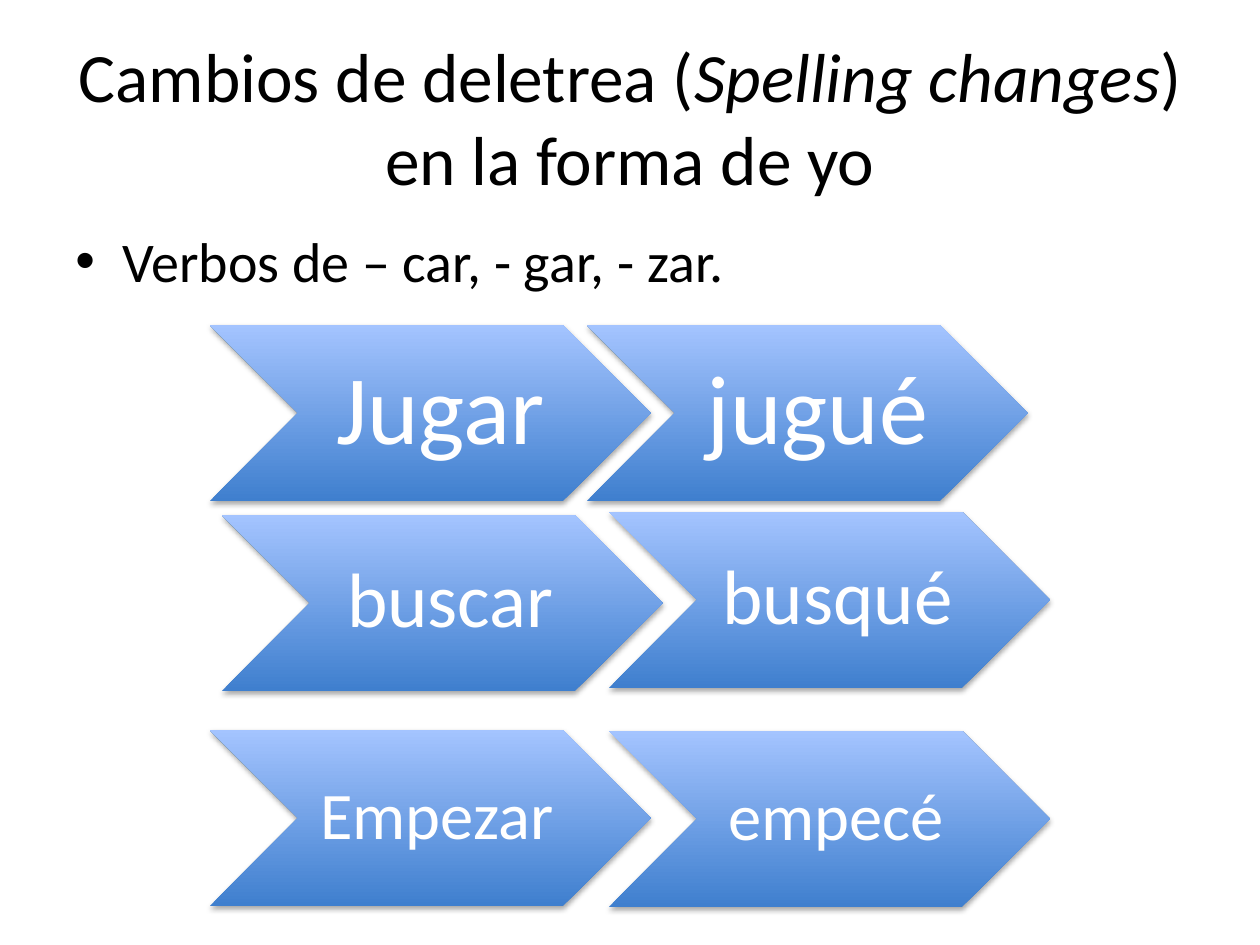
from lxml import etree
from pptx import Presentation
from pptx import util as u
from pptx.dml.color import RGBColor
from pptx.enum import shapes, text
from pptx.oxml.ns import qn

EMU_PER_PX = 914400 / 126
BLACK = RGBColor(0x00, 0x00, 0x00)
WHITE = RGBColor(0xFF, 0xFF, 0xFF)
DEEP_BLUE = RGBColor(0x3F, 0x7F, 0xCE)
PALE_BLUE = RGBColor(0xA4, 0xC4, 0xFF)

CHEVRON_W, CHEVRON_H = 441, 176
LABEL_OFFSET, LABEL_W = 88, 265

# One verb per row: font size, left inset, other insets, (word, left, top) pairs
VERB_ROWS = [
    (56, 30, 10, [("Jugar", 210, 325), ("jugué", 587, 325)]),
    (44, 24, 8, [("buscar", 222, 515), ("busqué", 609, 512)]),
    (38, 21, 8, [("Empezar", 210, 730), ("empecé", 609, 731)]),
]


def px(length):
    return u.Emu(round(length * EMU_PER_PX))


def apply(target, values):
    for name, value in values.items():
        setattr(target, name, value)


def add_text(parent, bounds, spans, size, color, frame_format, para_format):
    """Add a one-paragraph text box; spans are (words, italic) pairs."""
    box = parent.add_textbox(*map(px, bounds))
    apply(box.text_frame, {"word_wrap": True, **frame_format})
    para = box.text_frame.paragraphs[0]
    apply(para, para_format)
    for words, italic in spans:
        span = para.add_run()
        span.text = words
        apply(span.font, {"name": "Calibri", "size": u.Pt(size), "italic": italic})
        span.font.color.rgb = color
    return para


def add_bullet(para, indent):
    props = para._p.get_or_add_pPr()
    props.set("marL", str(px(indent)))
    props.set("indent", str(-px(indent)))
    etree.SubElement(props, qn("a:buFont")).set("typeface", "Arial")
    etree.SubElement(props, qn("a:buChar")).set("char", "•")


def add_shadow(shape):
    shape.shadow.inherit = False
    effects = shape._element.spPr.find(qn("a:effectLst"))
    shadow = etree.SubElement(effects, qn("a:outerShdw"))
    values = {"blurRad": u.Pt(3.1), "dist": u.Pt(1.8), "dir": 90 * 60000, "rotWithShape": 0}
    for name, value in values.items():
        shadow.set(name, str(value))
    color = etree.SubElement(shadow, qn("a:srgbClr"), val="000000")
    etree.SubElement(color, qn("a:alpha"), val="35000")


def add_chevron(parent, left, top):
    bounds = (left, top, CHEVRON_W, CHEVRON_H)
    chevron = parent.add_shape(shapes.MSO_SHAPE.CHEVRON, *map(px, bounds))
    chevron.line.fill.background()
    chevron.fill.gradient()
    chevron.fill.gradient_angle = 90
    for stop, color, position in zip(chevron.fill.gradient_stops, (DEEP_BLUE, PALE_BLUE), (0, 1)):
        stop.color.rgb = color
        stop.position = position
    add_shadow(chevron)


def add_verb_row(page, size, left_inset, inset, words):
    group = page.shapes.add_group_shape().shapes
    frame_format = {
        "vertical_anchor": text.MSO_ANCHOR.MIDDLE,
        "margin_left": px(left_inset),
        "margin_top": px(inset),
        "margin_right": px(inset),
        "margin_bottom": px(inset),
    }
    para_format = {"alignment": text.PP_ALIGN.CENTER, "line_spacing": 0.9}
    for word, left, top in words:
        add_chevron(group, left, top)
        add_text(group, (left + LABEL_OFFSET, top, LABEL_W, CHEVRON_H), [(word, False)],
                 size, WHITE, frame_format, para_format)


def main():
    deck = Presentation()
    apply(deck, {"slide_width": px(1260), "slide_height": px(945)})
    page = deck.slides.add_slide(deck.slide_layouts[6])

    # Title
    title = [("Cambios de deletrea (", False), ("Spelling changes", True),
             (") en la forma de yo", False)]
    add_text(page.shapes, (63, 38, 1134, 157), title, 39.6, BLACK,
             {"vertical_anchor": text.MSO_ANCHOR.MIDDLE},
             {"alignment": text.PP_ALIGN.CENTER})

    # Verb endings
    endings = add_text(page.shapes, (63, 220, 1134, 105),
                       [("Verbos de – car, - gar, - zar.", False)], 32, BLACK,
                       {"vertical_anchor": text.MSO_ANCHOR.TOP},
                       {"space_before": u.Pt(6.4)})
    add_bullet(endings, 47)

    # Infinitive and yo form of each verb
    for row in VERB_ROWS:
        add_verb_row(page, *row)

    deck.save("out.pptx")


if __name__ == "__main__":
    main()
